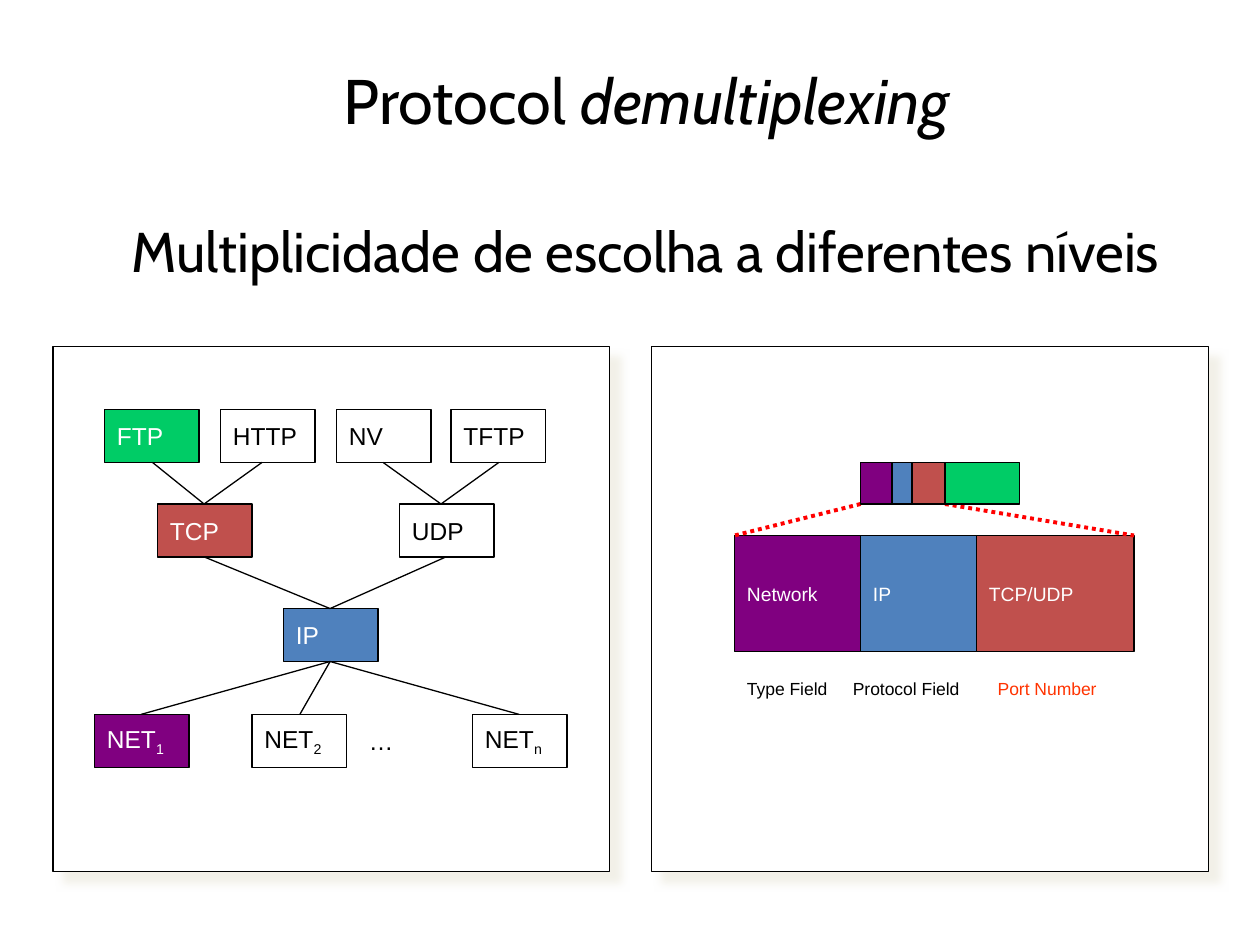
from typing import NamedTuple, Optional

from lxml import etree
from pptx import Presentation
from pptx.dml.color import RGBColor
from pptx.enum.dml import MSO_LINE
from pptx.enum.shapes import MSO_CONNECTOR, MSO_SHAPE
from pptx.enum.text import MSO_ANCHOR, PP_ALIGN
from pptx.oxml import parse_xml
from pptx.oxml.ns import qn
from pptx.util import Inches, Pt

RECTANGLE = MSO_SHAPE.RECTANGLE
STRAIGHT = MSO_CONNECTOR.STRAIGHT
DOTTED = MSO_LINE.ROUND_DOT
TOP, MIDDLE = MSO_ANCHOR.TOP, MSO_ANCHOR.MIDDLE
LEFT, CENTER = PP_ALIGN.LEFT, PP_ALIGN.CENTER

BLACK, WHITE, RED, ORANGE = "000000", "FFFFFF", "FF0000", "FF3300"
APPLICATION, TRANSPORT, INTERNET, NETWORK = "00CC66", "C0504D", "4F81BD", "800080"

PANEL_SHADOW = (
    '<a:effectLst xmlns:a="http://schemas.openxmlformats.org/drawingml/2006/main">'
    '<a:outerShdw blurRad="63500" dist="107950" dir="2700000" algn="ctr" rotWithShape="0">'
    '<a:srgbClr val="EEECE1"><a:alpha val="75000"/></a:srgbClr>'
    "</a:outerShdw></a:effectLst>"
)


class Node(NamedTuple):
    label: str
    left: float
    top: float
    fill: str = WHITE
    subscript: str = ""
    outline: Optional[str] = BLACK


class Field(NamedTuple):
    label: str
    left: float
    width: float
    fill: str


class Caption(NamedTuple):
    label: str
    left: float
    width: float
    color: str = BLACK


class Link(NamedTuple):
    x1: float
    y1: float
    x2: float
    y2: float


APP_TOP, TRANSPORT_TOP, IP_TOP, NET_TOP = 3.25, 4, 4.83, 5.67
NODE_WIDTH, NODE_HEIGHT = 0.75, 0.42
NODES = [
    Node("FTP", 0.83, APP_TOP, APPLICATION),
    Node("HTTP", 1.75, APP_TOP),
    Node("NV", 2.67, APP_TOP),
    Node("TFTP", 3.58, APP_TOP),
    Node("TCP", 1.25, TRANSPORT_TOP, TRANSPORT),
    Node("UDP", 3.17, TRANSPORT_TOP),
    Node("IP", 2.25, IP_TOP, INTERNET),
    Node("NET", 0.75, NET_TOP, NETWORK, "1"),
    Node("NET", 2, NET_TOP, subscript="2"),
    Node("NET", 3.75, NET_TOP, subscript="n"),
    Node("…", 2.83, NET_TOP, outline=None),
]
TCP_X, UDP_X, IP_X = 1.62, 3.5, 2.62
LINKS = (
    [Link(x, 3.67, TCP_X, TRANSPORT_TOP) for x in (1.21, 2.08)]
    + [Link(x, 3.67, UDP_X, TRANSPORT_TOP) for x in (3.04, 3.96)]
    + [Link(x, 4.42, IP_X, IP_TOP) for x in (TCP_X, 3.54)]
    + [Link(IP_X, 5.25, x, NET_TOP) for x in (1.12, 2.38, 4.12)]
)

HEADER_TOP, HEADER_HEIGHT = 4.25, 0.92
HEADER_FIELDS = [
    Field("TCP/UDP", 7.75, 1.25, TRANSPORT),
    Field("IP", 6.83, 0.92, INTERNET),
    Field("Network", 5.83, 1, NETWORK),
]
PACKET_TOP, PACKET_HEIGHT = 3.67, 0.33
# Each part overlaps the one to its right, so they run from right to left.
PACKET_PARTS = [
    Field("", 7.42, 0.67, APPLICATION),
    Field("", 7.17, 0.33, TRANSPORT),
    Field("", 6.91, 0.33, INTERNET),
    Field("", 6.83, 0.25, NETWORK),
]
CAPTIONS = [
    Caption("Type Field", 5.83, 1),
    Caption("Protocol Field", 6.67, 1.25),
    Caption("Port Number", 7.82, 1.26, ORANGE),
]
ZOOM_LINKS = [Link(6.83, 4, 5.83, HEADER_TOP), Link(7.5, 4, 9, HEADER_TOP)]


def rgb(value: str) -> RGBColor:
    return RGBColor.from_string(value)


def style_run(run, size: float, color: str, font: str = "Arial") -> None:
    run.font.name = font
    run.font.size = Pt(size)
    run.font.color.rgb = rgb(color)


def add_box(slide, left: float, top: float, width: float, height: float,
            fill: str, outline: Optional[str] = BLACK):
    box = slide.shapes.add_shape(
        RECTANGLE, Inches(left), Inches(top), Inches(width), Inches(height))
    box.shadow.inherit = False
    box.fill.solid()
    box.fill.fore_color.rgb = rgb(fill)
    if outline:
        box.line.color.rgb = rgb(outline)
        box.line.width = Pt(0.75)
    else:
        box.line.fill.background()
    return box


def add_panel(slide, left: float) -> None:
    properties = add_box(slide, left, 2.75, 4.42, 4.17, WHITE)._element.spPr
    properties.replace(properties.find(qn("a:effectLst")), parse_xml(PANEL_SHADOW))


def label_box(box, text: str, size: float, color: str, subscript: str = "") -> None:
    frame = box.text_frame
    frame.word_wrap = False
    frame.vertical_anchor = MIDDLE
    paragraph = frame.paragraphs[0]
    paragraph.alignment = LEFT
    paragraph.text = text
    if subscript:
        lowered = paragraph.add_run()
        lowered.text = subscript
        lowered.font._element.set("baseline", "-25000")
    for run in paragraph.runs:
        style_run(run, size, color)


def add_node(slide, node: Node) -> None:
    box = add_box(slide, node.left, node.top, NODE_WIDTH, NODE_HEIGHT,
                  node.fill, node.outline)
    color = BLACK if node.fill == WHITE else WHITE
    label_box(box, node.label, 14, color, node.subscript)


def add_field(slide, field: Field, top: float, height: float) -> None:
    box = add_box(slide, field.left, top, field.width, height, field.fill)
    if field.label:
        label_box(box, field.label, 11, WHITE)


def add_link(slide, link: Link, color: str = BLACK, width: float = 0.75,
             dash: Optional[MSO_LINE] = None) -> None:
    line = slide.shapes.add_connector(STRAIGHT, *(Inches(value) for value in link))
    line.line.color.rgb = rgb(color)
    line.line.width = Pt(width)
    if dash is not None:
        line.line.dash_style = dash
    etree.SubElement(line._element.spPr, qn("a:effectLst"))


def add_text(slide, left: float, top: float, width: float, height: float, text: str,
             size: float, color: str = BLACK, font: str = "Arial",
             align: PP_ALIGN = LEFT, anchor: MSO_ANCHOR = TOP):
    frame = slide.shapes.add_textbox(
        Inches(left), Inches(top), Inches(width), Inches(height)).text_frame
    frame.word_wrap = True
    frame.vertical_anchor = anchor
    paragraph = frame.paragraphs[0]
    paragraph.text = text
    paragraph.alignment = align
    style_run(paragraph.runs[0], size, color, font)
    return paragraph


def main() -> None:
    presentation = Presentation()
    presentation.slide_width, presentation.slide_height = Inches(10), Inches(7.5)
    slide = presentation.slides.add_slide(presentation.slide_layouts[6])

    title = add_text(slide, 0.67, 0.25, 8.92, 1.08, "Protocol ", 36,
                     font="Cabin", align=CENTER, anchor=MIDDLE)
    emphasis = title.add_run()
    emphasis.text = "demultiplexing"
    style_run(emphasis, 36, BLACK, "Cabin")
    emphasis.font.italic = True
    add_text(slide, 0.5, 1.67, 9.25, 0.92,
             "Multiplicidade de escolha a diferentes níveis", 32,
             font="Cabin", align=CENTER)

    for left in (5.17, 0.42):
        add_panel(slide, left)
    for node in NODES:
        add_node(slide, node)
    for link in LINKS:
        add_link(slide, link)

    for field in HEADER_FIELDS:
        add_field(slide, field, HEADER_TOP, HEADER_HEIGHT)
    for caption in CAPTIONS:
        add_text(slide, caption.left, 5.33, caption.width, 0.29,
                 caption.label, 10, caption.color)
    for link in ZOOM_LINKS:
        add_link(slide, link, RED, 2.25, DOTTED)
    for part in PACKET_PARTS:
        add_field(slide, part, PACKET_TOP, PACKET_HEIGHT)

    presentation.save("out.pptx")


if __name__ == "__main__":
    main()
